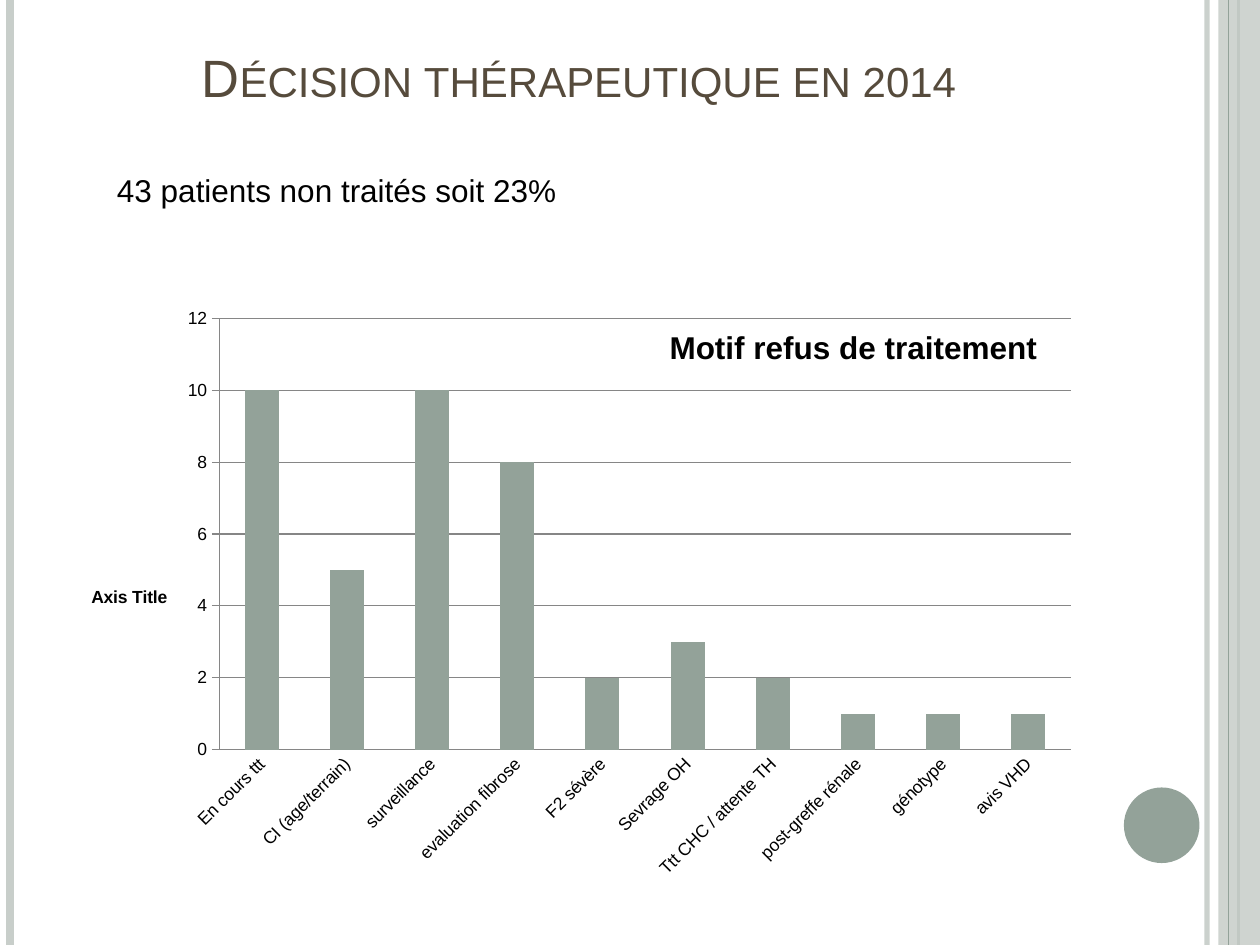
from dataclasses import dataclass

from lxml import etree
from pptx import Presentation
from pptx.chart.data import CategoryChartData
from pptx.dml.color import RGBColor
from pptx.enum import chart as ch, shapes, text
from pptx.oxml import ns
from pptx.util import Inches, Pt


@dataclass(frozen=True)
class Theme:
    font: str = "Arial"
    sage: str = "93A299"
    pale: str = "C8CECA"
    brown: str = "564B3C"
    black: str = "000000"
    grid: str = "868686"
    head: int = 30
    body: int = 18
    small: int = 10


T = Theme()
REASONS = {
    "En cours ttt": 10, "CI (age/terrain)": 5, "surveillance": 10,
    "evaluation fibrose": 8, "F2 sévère": 2, "Sevrage OH": 3,
    "Ttt CHC / attente TH": 2, "post-greffe rénale": 1,
    "génotype": 1, "avis VHD": 1,
}


def style(font, color, size, bold=False):
    for key, val in {"name": T.font, "size": Pt(size), "bold": bold}.items():
        setattr(font, key, val)
    font.color.rgb = RGBColor.from_string(color)


def fade(fill, alpha):
    """Set the opacity, in percent, of a solid fill."""
    tone = fill.find(".//" + ns.qn("a:srgbClr"))
    etree.SubElement(tone, ns.qn("a:alpha"), val=str(alpha * 1000))


def rule(slide, x, top, bottom, color, width, alpha=100):
    line = slide.shapes.add_connector(
        shapes.MSO_CONNECTOR.STRAIGHT, Inches(x), Inches(top), Inches(x), Inches(bottom))
    line.line.width = Pt(width)
    line.line.color.rgb = RGBColor.from_string(color)
    props = line._element.spPr
    if alpha < 100:
        fade(props, alpha)
    etree.SubElement(props, ns.qn("a:effectLst"))


def block(slide, kind, box, color, alpha=100):
    shape = slide.shapes.add_shape(kind, *map(Inches, box))
    shape.shadow.inherit = False
    shape.fill.solid()
    shape.fill.fore_color.rgb = RGBColor.from_string(color)
    shape.line.fill.background()
    if alpha < 100:
        fade(shape._element.spPr, alpha)


def frame(slide, box):
    """Draw the side rules, the right band and the disc."""
    x, y, w, h = box
    right, end = x + w, y + h
    rule(slide, right - 0.42, y, end, T.pale, 3, 93)
    rule(slide, x + 0.08, y, end, T.pale, 4.5)
    rule(slide, right - 0.17, y, end, T.sage, 1.5)
    block(slide, shapes.MSO_SHAPE.RECTANGLE, (right - 0.33, y, 0.33, h), T.pale, 87)
    rule(slide, right - 0.25, y, end, T.sage, 0.75)
    block(slide, shapes.MSO_SHAPE.OVAL, (right - 1.08, end - 1.25, 0.6, 0.6), T.sage)


def label(slide, box, words, color, size, anchor="TOP", align="LEFT", caps=False):
    area = slide.shapes.add_textbox(*map(Inches, box)).text_frame
    area.word_wrap = True
    area.vertical_anchor = text.MSO_ANCHOR[anchor]
    para = area.paragraphs[0]
    para.alignment = text.PP_ALIGN[align]
    run = para.add_run()
    run.text = words
    style(run.font, color, size)
    if caps:
        run.font._element.set("cap", "small")


def place(node, index, **spots):
    """Give a chart part a manual layout, in fractions of the chart."""
    old = node.find(ns.qn("c:layout"))
    if old is not None:
        node.remove(old)
    layout = etree.Element(ns.qn("c:layout"))
    manual = etree.SubElement(layout, ns.qn("c:manualLayout"))
    if "w" in spots:
        etree.SubElement(manual, ns.qn("c:layoutTarget"), val="inner")
    for key in "xy":
        etree.SubElement(manual, ns.qn(f"c:{key}Mode"), val="edge")
    for key, val in spots.items():
        etree.SubElement(manual, ns.qn(f"c:{key}"), val=f"{val:.4f}")
    node.insert(index, layout)


def caption(title, words, size, x, y):
    area = title.text_frame
    area.text = words
    style(area.paragraphs[0].runs[0].font, T.black, size, True)
    turn(area._txBody, 0)
    place(title._element, 1, x=x, y=y)


def turn(body, angle):
    props = body.find(ns.qn("a:bodyPr"))
    props.set("rot", str(angle * 60000))
    props.set("vert", "horz")


def chart(slide, box):
    name = "Motif refus de traitement"
    data = CategoryChartData()
    data.categories = list(REASONS)
    data.add_series(name, list(REASONS.values()))
    graph = slide.shapes.add_chart(
        ch.XL_CHART_TYPE.COLUMN_CLUSTERED, *map(Inches, box), data).chart
    style(graph.font, T.black, T.small)
    graph.has_legend = False
    graph.has_title = True
    left, top, wide, high = box
    caption(graph.chart_title, name, T.body, (5.27 - left) / wide, (2.55 - top) / high)
    graph.chart_title.include_in_layout = False

    plot = graph.plots[0]
    plot.gap_width = 150
    plot.vary_by_categories = False
    bars = plot.series[0].format.fill
    bars.solid()
    bars.fore_color.rgb = RGBColor.from_string(T.sage)

    cats, vals = graph.category_axis, graph.value_axis
    cats.major_tick_mark = ch.XL_TICK_MARK.NONE
    vals.major_tick_mark = ch.XL_TICK_MARK.OUTSIDE
    for key, val in {"minimum_scale": 0, "maximum_scale": 12, "major_unit": 2,
                     "has_major_gridlines": True, "has_title": True}.items():
        setattr(vals, key, val)
    for part in (cats, vals, vals.major_gridlines):
        part.format.line.color.rgb = RGBColor.from_string(T.grid)
        part.format.line.width = Pt(0.75)
    for axis in (cats, vals):
        style(axis.tick_labels.font, T.black, T.small)
    turn(cats._element.find(ns.qn("c:txPr")), -45)
    caption(vals.axis_title, "Axis Title", T.small,
            (0.7 - left) / wide, (4.62 - top) / high)
    place(graph._chartSpace.chart.plotArea, 0, x=(1.74 - left) / wide,
          y=(2.53 - top) / high, w=6.76 / wide, h=3.42 / high)


def main():
    deck = Presentation()
    deck.slide_width, deck.slide_height = Inches(10), Inches(7.5)
    slide = deck.slides.add_slide(deck.slide_layouts[6])
    frame(slide, (0, 0, 10, 7.5))
    label(slide, (0.51, 0.29, 8.17, 0.62), "Décision thérapeutique en 2014",
          T.brown, T.head, "BOTTOM", "CENTER", True)
    label(slide, (0.83, 1.31, 3.78, 0.71), "43 patients non traités soit 23%",
          T.black, T.body)
    chart(slide, (0.5, 1.75, 8.17, 5.33))
    deck.save("out.pptx")


if __name__ == "__main__":
    main()
